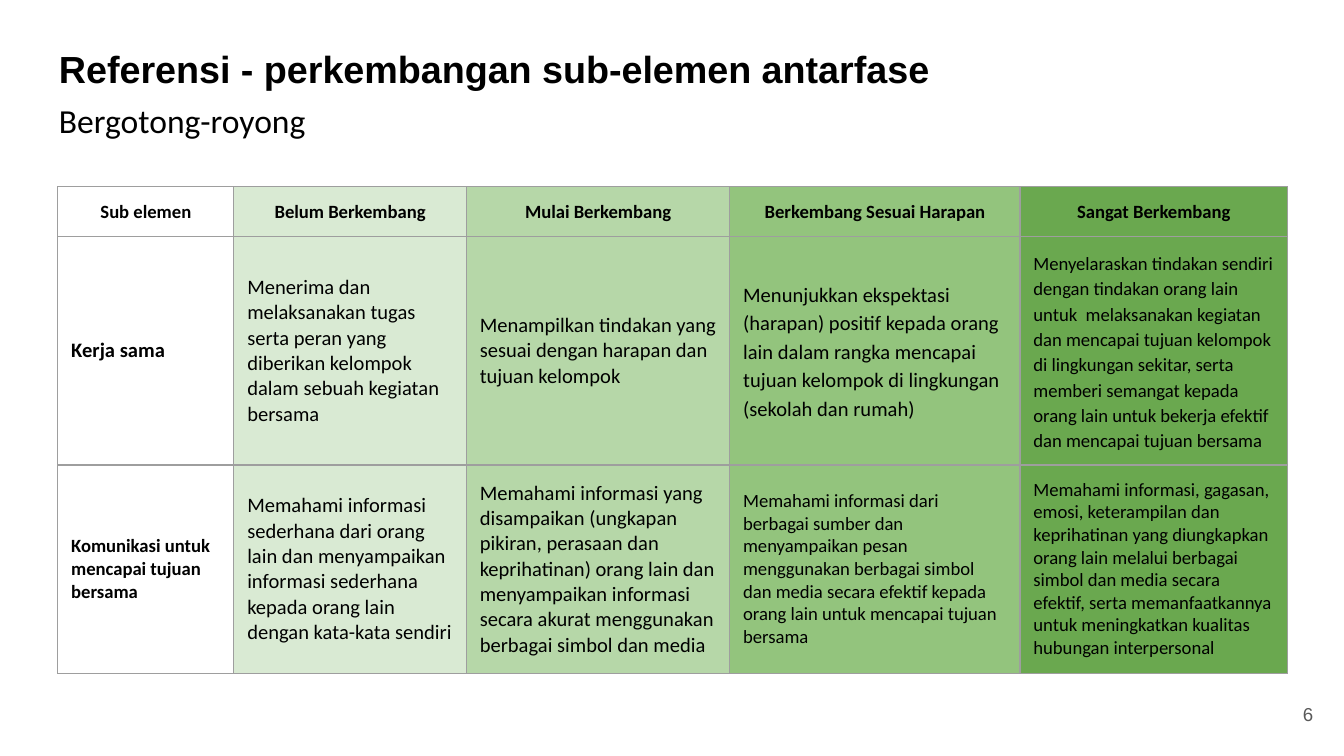
from lxml.etree import SubElement
from pptx import Presentation
from pptx.dml.color import RGBColor
from pptx.enum.text import MSO_ANCHOR, PP_ALIGN
from pptx.oxml.ns import qn
from pptx.util import Inches, Pt

BLACK = RGBColor(0x00, 0x00, 0x00)
WHITE = RGBColor(0xFF, 0xFF, 0xFF)
GRAY = RGBColor(0x59, 0x59, 0x59)
BORDER = RGBColor(0x9E, 0x9E, 0x9E)
FILLS = [
    WHITE,
    RGBColor(0xD9, 0xEA, 0xD3),
    RGBColor(0xB6, 0xD7, 0xA8),
    RGBColor(0x93, 0xC4, 0x7D),
    RGBColor(0x6A, 0xA8, 0x4F),
]


def write(p, text, size=10, font="Calibri", color=BLACK, bold=False,
          align=PP_ALIGN.LEFT, spacing=1.0, before=0):
    p.alignment = align
    p.line_spacing = spacing
    p.space_before = Pt(before)
    r = p.add_run()
    r.text = text
    r.font.size = Pt(size)
    r.font.name = font
    r.font.bold = bold
    r.font.color.rgb = color


def add_box(s, left, top, width, height, anchor):
    tf = s.shapes.add_textbox(Inches(left), Inches(top), Inches(width), Inches(height)).text_frame
    tf.word_wrap = True
    tf.vertical_anchor = anchor
    tf.margin_left = tf.margin_right = tf.margin_top = tf.margin_bottom = Inches(0.1)
    return tf


prs = Presentation()
prs.slide_width = Inches(10)
prs.slide_height = Inches(10) * 9 // 16
s = prs.slides.add_slide(prs.slide_layouts[6])

tf = add_box(s, 0.34, 0.24, 9.32, 0.85, MSO_ANCHOR.TOP)
write(tf.paragraphs[0], "Referensi - perkembangan sub-elemen antarfase",
      size=20.2, font="Arial", bold=True)
write(tf.add_paragraph(), "Bergotong-royong", size=18, before=4.7)

headers = ["Sub elemen", "Belum Berkembang", "Mulai Berkembang",
           "Berkembang Sesuai Harapan", "Sangat Berkembang"]
body = [
    [
        ("Kerja sama", 11, 1.0),
        ("Menerima dan melaksanakan tugas serta peran yang diberikan kelompok "
         "dalam sebuah kegiatan bersama", 11, 1.0),
        ("Menampilkan tindakan yang sesuai dengan harapan dan tujuan kelompok", 11, 1.0),
        ("Menunjukkan ekspektasi (harapan) positif kepada orang lain dalam rangka "
         "mencapai tujuan kelompok di lingkungan (sekolah dan rumah)", 11, 1.12),
        ("Menyelaraskan tindakan sendiri dengan tindakan orang lain untuk  melaksanakan "
         "kegiatan dan mencapai tujuan kelompok di lingkungan sekitar, serta memberi "
         "semangat kepada orang lain untuk bekerja efektif dan mencapai tujuan bersama",
         10, 1.12),
    ],
    [
        ("Komunikasi untuk mencapai tujuan bersama", 10, 1.0),
        ("Memahami informasi sederhana dari orang lain dan menyampaikan informasi "
         "sederhana kepada orang lain dengan kata-kata sendiri", 11, 1.0),
        ("Memahami informasi yang disampaikan (ungkapan pikiran, perasaan dan "
         "keprihatinan) orang lain dan menyampaikan informasi secara akurat "
         "menggunakan berbagai simbol dan media", 11, 1.0),
        ("Memahami informasi dari berbagai sumber dan menyampaikan pesan menggunakan "
         "berbagai simbol dan media secara efektif kepada orang lain untuk mencapai "
         "tujuan bersama", 10, 1.0),
        ("Memahami informasi, gagasan, emosi, keterampilan dan keprihatinan yang "
         "diungkapkan orang lain melalui berbagai simbol dan media secara efektif, "
         "serta memanfaatkannya untuk meningkatkan kualitas hubungan interpersonal",
         10, 1.0),
    ],
]
rows = [[(text, 10, 1.0) for text in headers]] + body
widths = [1.31, 1.73, 1.96, 2.16, 1.99]
heights = [0.37, 1.7, 1.55]

table = s.shapes.add_table(len(rows), len(widths), Inches(0.43), Inches(1.39),
                           Inches(sum(widths)), Inches(sum(heights))).table
table.horz_banding = False
for column, width in zip(table.columns, widths):
    column.width = Inches(width)
for row, height in zip(table.rows, heights):
    row.height = Inches(height)

for i, row in enumerate(rows):
    for j, (text, size, spacing) in enumerate(row):
        cell = table.cell(i, j)
        top_aligned = i > 0 and j == len(widths) - 1
        cell.vertical_anchor = MSO_ANCHOR.TOP if top_aligned else MSO_ANCHOR.MIDDLE
        cell.margin_left = cell.margin_right = Inches(0.1)
        cell.margin_top = cell.margin_bottom = Inches(0.1)
        write(cell.text_frame.paragraphs[0], text, size=size, spacing=spacing,
              bold=i == 0 or j == 0,
              align=PP_ALIGN.CENTER if i == 0 else PP_ALIGN.LEFT)
        tcPr = cell._tc.get_or_add_tcPr()
        for side in ("a:lnL", "a:lnR", "a:lnT", "a:lnB"):
            ln = SubElement(tcPr, qn(side), w=str(Pt(0.75)))
            line_fill = SubElement(ln, qn("a:solidFill"))
            SubElement(line_fill, qn("a:srgbClr"), val=str(BORDER))
        cell.fill.solid()
        cell.fill.fore_color.rgb = FILLS[j]

tf = add_box(s, 9.27, 5.1, 0.6, 0.43, MSO_ANCHOR.MIDDLE)
write(tf.paragraphs[0], "6", font="Arial", color=GRAY, align=PP_ALIGN.RIGHT)

prs.save("out.pptx")
